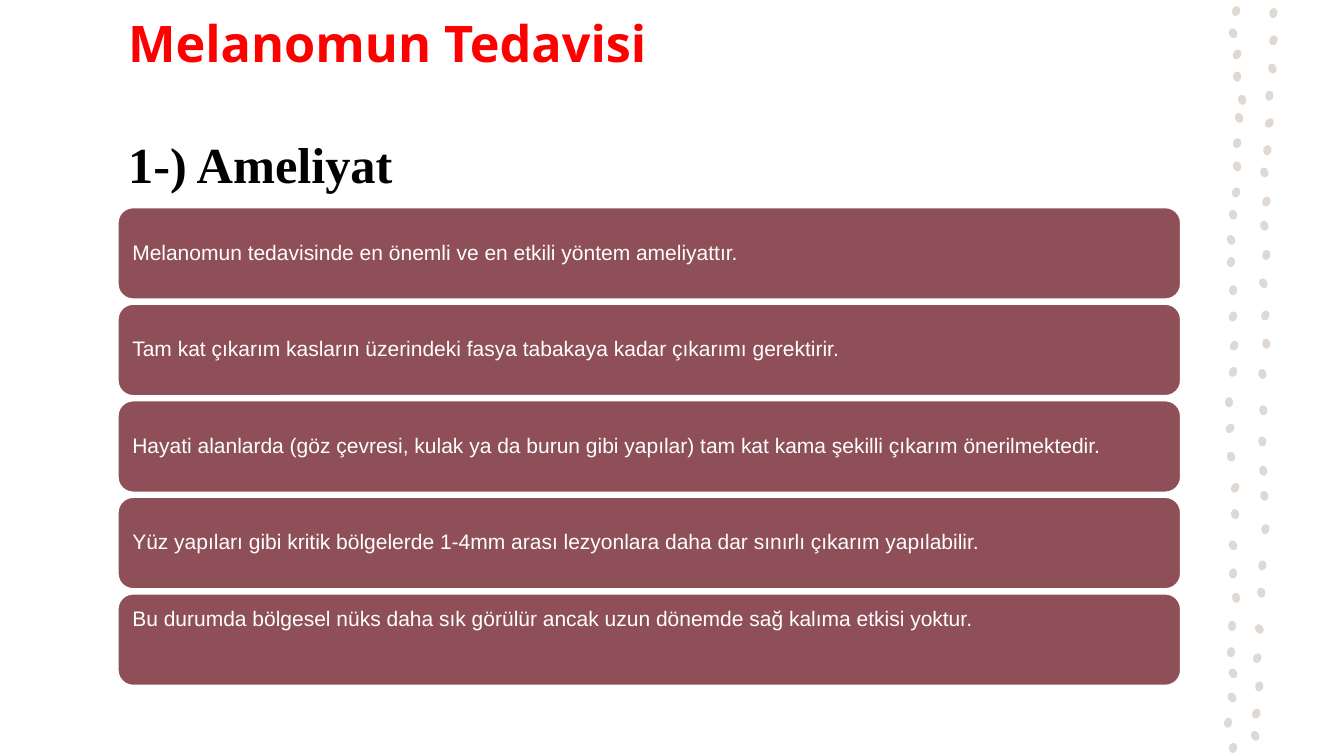
from pptx import Presentation
from pptx.dml.color import RGBColor
from pptx.enum.shapes import MSO_SHAPE as SHAPE
from pptx.enum.text import MSO_ANCHOR as ANCHOR, PP_ALIGN as ALIGN
from pptx.util import Inches, Pt

COLORS = {"red": "FF0000", "black": "000000", "white": "FFFFFF",
          "card": "8F4F58", "dot": "E0D8D2"}

TREATMENT_POINTS = [
    "Melanomun tedavisinde en önemli ve en etkili yöntem ameliyattır.",
    "Tam kat çıkarım kasların üzerindeki fasya tabakaya kadar çıkarımı gerektirir.",
    "Hayati alanlarda (göz çevresi, kulak ya da burun gibi yapılar) tam kat kama "
    "şekilli çıkarım önerilmektedir.",
    "Yüz yapıları gibi kritik bölgelerde 1-4mm arası lezyonlara daha dar sınırlı "
    "çıkarım yapılabilir.",
    "Bu durumda bölgesel nüks daha sık görülür ancak uzun dönemde sağ kalıma "
    "etkisi yoktur.",
]

# Dot centres within the strip and their tilt in degrees
LEFT_DOTS = [
    (0.16, 0.11, 20), (0.13, 0.33, -25), (0.17, 0.54, 30), (0.17, 0.76, 0),
    (0.22, 0.99, -20), (0.19, 1.17, -20), (0.17, 1.42, 20), (0.17, 1.65, -15),
    (0.16, 1.91, 20), (0.13, 2.13, -15), (0.11, 2.38, -25), (0.11, 2.60, 10),
    (0.13, 2.88, 0), (0.13, 3.14, 20), (0.14, 3.43, 30), (0.13, 3.69, 20),
    (0.09, 3.99, 0), (0.10, 4.25, 40), (0.11, 4.53, -20), (0.15, 4.84, 30),
    (0.15, 5.10, -10), (0.13, 5.41, -25), (0.13, 5.69, 10), (0.16, 5.93, -10),
    (0.12, 6.21, 0), (0.11, 6.47, 10), (0.13, 6.68, -30), (0.12, 6.92, -35),
    (0.08, 7.17, 15), (0.13, 7.42, 10),
]
RIGHT_DOTS = [
    (0.53, 0.13, 10), (0.53, 0.40, 20), (0.52, 0.68, -20), (0.49, 0.95, 10),
    (0.49, 1.22, 35), (0.47, 1.49, 10), (0.44, 1.71, -20), (0.46, 2.00, 25),
    (0.44, 2.24, -20), (0.46, 2.53, 10), (0.43, 2.81, -25), (0.45, 3.13, 20),
    (0.46, 3.41, -10), (0.42, 3.71, -15), (0.43, 4.07, -10), (0.42, 4.38, -10),
    (0.43, 4.67, -15), (0.44, 4.92, -15), (0.45, 5.25, 15), (0.42, 5.61, 10),
    (0.41, 5.88, -10), (0.39, 6.24, -35), (0.37, 6.53, 30), (0.39, 6.81, 10),
    (0.36, 7.08, 20), (0.35, 7.30, -25),
]


def rgb(name):
    return RGBColor.from_string(COLORS[name])


def add_text(paragraph, text, font, size, color, bold=False):
    run = paragraph.add_run()
    run.text = text
    run.font.name = font
    run.font.size = Pt(size)
    run.font.bold = bold
    run.font.color.rgb = rgb(color)


def add_dot_strip(slide, left, top):
    width, height = 0.08, 0.1
    for x, y, tilt in LEFT_DOTS + RIGHT_DOTS:
        dot = slide.shapes.add_shape(
            SHAPE.OVAL, Inches(left + x - width / 2), Inches(top + y - height / 2),
            Inches(width), Inches(height))
        dot.rotation = tilt
        dot.shadow.inherit = False
        dot.fill.solid()
        dot.fill.fore_color.rgb = rgb("dot")
        dot.line.fill.background()


def place_title(slide, left, top, width, height):
    title = slide.shapes.title
    title.left, title.top = Inches(left), Inches(top)
    title.width, title.height = Inches(width), Inches(height)
    frame = title.text_frame
    frame.word_wrap = True
    frame.vertical_anchor = ANCHOR.TOP
    topic, method = frame.paragraphs[0], frame.add_paragraph()
    for line in (topic, method):
        line.alignment = ALIGN.LEFT
        line.line_spacing = 1.0
        line.space_before = Pt(0)
    method.space_before = Pt(43)
    add_text(topic, "Melanomun Tedavisi", "Open Sans", 36, "red", True)
    add_text(method, "1-) Ameliyat", "Times New Roman", 36, "black", True)


def add_card(slide, text, left, top, width, height, anchor):
    card = slide.shapes.add_shape(SHAPE.ROUNDED_RECTANGLE, Inches(left), Inches(top),
                                  Inches(width), Inches(height))
    card.shadow.inherit = False
    card.fill.solid()
    card.fill.fore_color.rgb = rgb("card")
    card.line.color.rgb = rgb("white")
    card.line.width = Pt(1)
    frame = card.text_frame
    frame.word_wrap = True
    frame.vertical_anchor = anchor
    frame.margin_left = frame.margin_right = Inches(0.1)
    frame.margin_top = frame.margin_bottom = Inches(0.1)
    point = frame.paragraphs[0]
    point.alignment = ALIGN.LEFT
    point.line_spacing = 0.9
    add_text(point, text, "Arial", 15, "white")


def add_card_list(slide, left, top, width, height, gap=0.05):
    count = len(TREATMENT_POINTS)
    card_height = (height - gap * (count - 1)) / count
    for i, text in enumerate(TREATMENT_POINTS):
        anchor = ANCHOR.TOP if i == count - 1 else ANCHOR.MIDDLE
        add_card(slide, text, left, top + i * (card_height + gap), width,
                 card_height, anchor)


def main():
    deck = Presentation()
    deck.slide_width, deck.slide_height = Inches(13.33), Inches(7.5)
    slide = deck.slides.add_slide(deck.slide_layouts[5])
    add_dot_strip(slide, 12.1, 0)
    place_title(slide, 1.17, 0.07, 10.54, 1.98)
    add_card_list(slide, 1.17, 2.06, 10.54, 4.74)
    deck.save("out.pptx")


if __name__ == "__main__":
    main()
